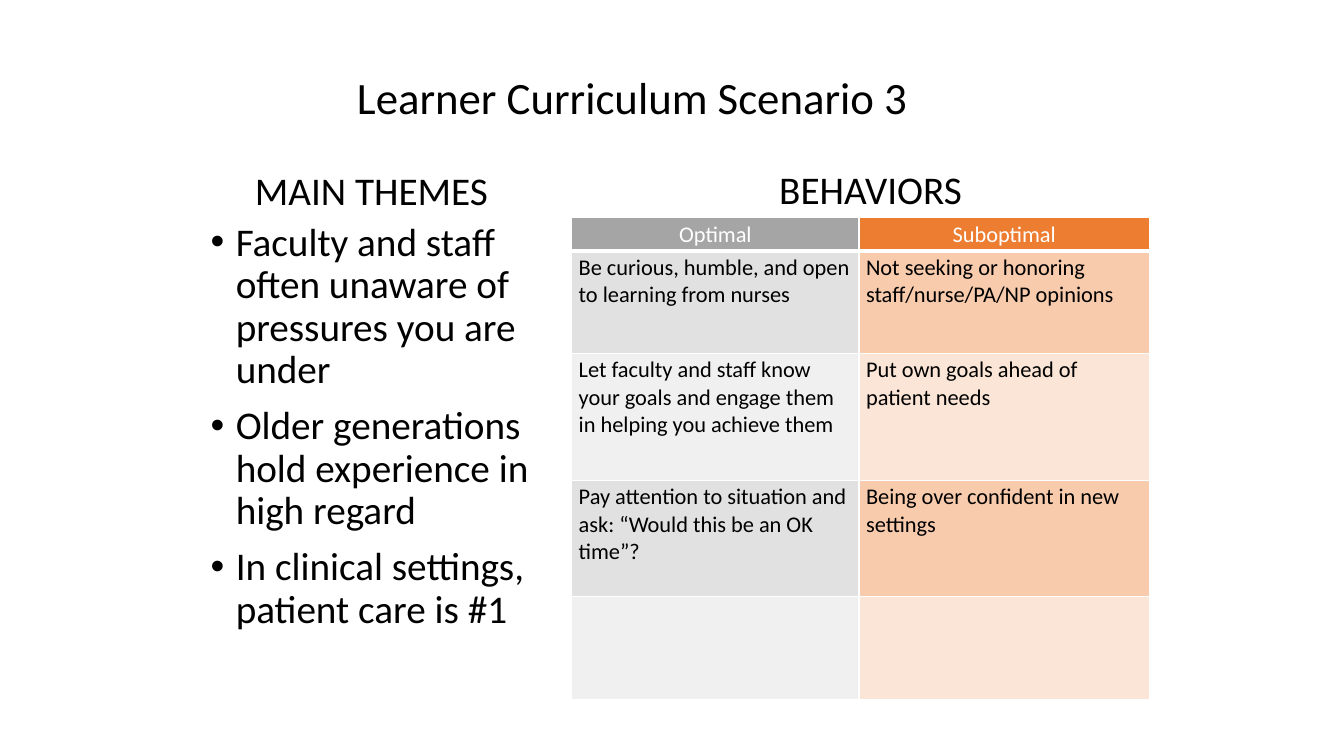
"""Builds the slide on learner curriculum scenario 3."""
from lxml import etree
from pptx import Presentation
from pptx import util as u
from pptx.dml.color import RGBColor
from pptx.enum import text
from pptx.oxml import ns

HEADER = ("Optimal", "Suboptimal")
BEHAVIORS = [
    ("Be curious, humble, and open to learning from nurses",
     "Not seeking or honoring staff/nurse/PA/NP opinions"),
    ("Let faculty and staff know your goals and engage them in helping you achieve them",
     "Put own goals ahead of patient needs"),
    ("Pay attention to situation and ask: “Would this be an OK time”?",
     "Being over confident in new settings"),
    ("", ""),
]
THEMES = [
    "Faculty and staff often unaware of pressures you are under",
    "Older generations hold experience in high regard",
    "In clinical settings, patient care is #1",
]
HEADER_FILLS = ("A5A5A5", "ED7D31")
BAND_FILLS = (("E1E1E1", "F8CBAD"), ("F0F0F0", "FBE5D6"))
COL_WIDTHS = (2.85, 2.88)
ROW_HEIGHTS = (0.3, 1.02, 1.26, 1.15, 1.02)


def rgb(value):
    return RGBColor.from_string(value)


class Deck:
    font = "Calibri"
    ink = "000000"
    paper = "FFFFFF"

    def __init__(self):
        self.prs = Presentation()
        self.prs.slide_width = u.Inches(13.33)
        self.prs.slide_height = u.Inches(7.5)
        self.slide = self.prs.slides.add_slide(self.prs.slide_layouts[5])

    def run(self, p, words, size, color=ink):
        r = p.add_run()
        r.text = words
        r.font.name = self.font
        r.font.size = u.Pt(size)
        r.font.color.rgb = rgb(color)

    def title(self, words, *box):
        sp = self.slide.shapes.title
        sp.left, sp.top, sp.width, sp.height = map(u.Inches, box)
        tf = sp.text_frame
        tf.vertical_anchor = text.MSO_ANCHOR.BOTTOM
        tf.auto_size = text.MSO_AUTO_SIZE.NONE
        p = tf.paragraphs[0]
        p.alignment = text.PP_ALIGN.LEFT
        p.line_spacing = 0.9
        self.run(p, words, 32)

    def text_frame(self, *box):
        tf = self.slide.shapes.add_textbox(*map(u.Inches, box)).text_frame
        tf.word_wrap = True
        return tf

    def heading(self, words, *box):
        tf = self.text_frame(*box)
        tf.auto_size = text.MSO_AUTO_SIZE.SHAPE_TO_FIT_TEXT
        self.run(tf.paragraphs[0], words, 28)

    def bullets(self, items, *box):
        tf = self.text_frame(*box)
        for i, item in enumerate(items):
            p = tf.add_paragraph() if i else tf.paragraphs[0]
            p.line_spacing = 0.9
            p.space_before = u.Pt(10 if i else 0)
            pPr = p._p.get_or_add_pPr()
            pPr.set("marL", str(u.Inches(0.25)))
            pPr.set("indent", str(-u.Inches(0.25)))
            etree.SubElement(pPr, ns.qn("a:buFont"), typeface="Arial")
            etree.SubElement(pPr, ns.qn("a:buChar"), char="•")
            self.run(p, item, 28)

    def borders(self, cell, bottom):
        tcPr = cell._tc.get_or_add_tcPr()
        for side, width in zip("LRTB", (1, 1, 1, bottom)):
            ln = etree.SubElement(tcPr, ns.qn("a:ln" + side), w=str(u.Pt(width)))
            fill = etree.SubElement(ln, ns.qn("a:solidFill"))
            etree.SubElement(fill, ns.qn("a:srgbClr"), val=self.paper)

    def cell(self, cell, words, fill, header):
        self.borders(cell, 3 if header else 1)
        cell.fill.solid()
        cell.fill.fore_color.rgb = rgb(fill)
        cell.margin_left = cell.margin_right = u.Inches(0.07)
        cell.margin_top = cell.margin_bottom = u.Inches(0.03)
        p = cell.text_frame.paragraphs[0]
        if header:
            p.alignment = text.PP_ALIGN.CENTER
        if words:
            self.run(p, words, 16, self.paper if header else self.ink)

    def table(self, rows, left, top):
        box = map(u.Inches, (left, top, sum(COL_WIDTHS), sum(ROW_HEIGHTS)))
        table = self.slide.shapes.add_table(len(rows), len(COL_WIDTHS), *box).table
        for col, width in zip(table.columns, COL_WIDTHS):
            col.width = u.Inches(width)
        for i, (row, height) in enumerate(zip(table.rows, ROW_HEIGHTS)):
            row.height = u.Inches(height)
            fills = BAND_FILLS[(i - 1) % 2] if i else HEADER_FILLS
            for cell, words, fill in zip(row.cells, rows[i], fills):
                self.cell(cell, words, fill, i == 0)


def main():
    deck = Deck()
    deck.title("Learner Curriculum Scenario 3", 3.44, 0.26, 6.46, 1.02)
    deck.bullets(THEMES, 1.99, 2.16, 3.46, 4.06)
    deck.table([HEADER, *BEHAVIORS], 5.67, 2.16)
    deck.heading("BEHAVIORS", 7.63, 1.59, 2.05, 0.57)
    deck.heading("MAIN THEMES", 2.43, 1.6, 2.57, 0.57)
    deck.prs.save("out.pptx")


if __name__ == "__main__":
    main()
